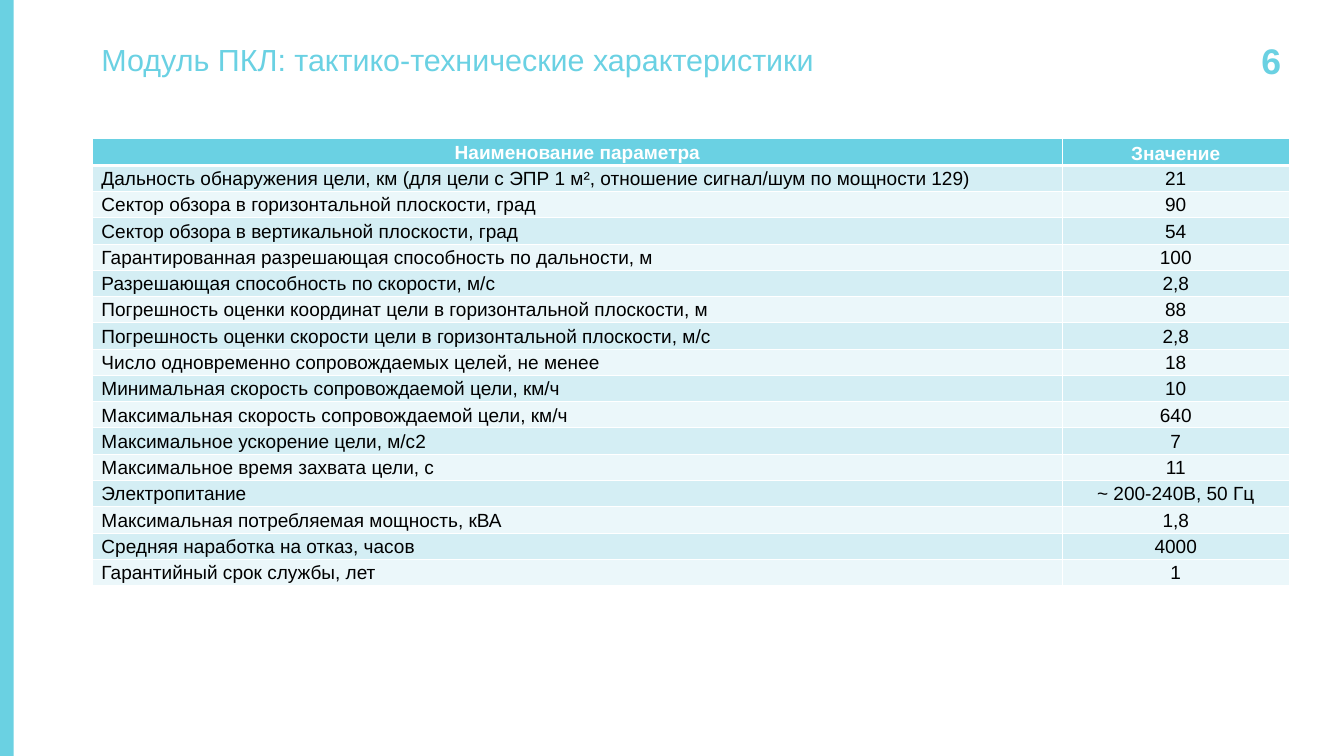
from lxml import etree
from pptx import Presentation
from pptx.dml.color import RGBColor
from pptx.enum.shapes import MSO_SHAPE as SHAPE
from pptx.enum.text import MSO_ANCHOR as ANCHOR, PP_ALIGN as ALIGN
from pptx.oxml.ns import qn
from pptx.util import Inches, Pt

CYAN = RGBColor(0x6A, 0xD1, 0xE2)
HEAD = RGBColor(0x6A, 0xD1, 0xE3)
DARK = RGBColor(0xD4, 0xEE, 0xF4)
PALE = RGBColor(0xEB, 0xF7, 0xFA)
WHITE = RGBColor(0xFF, 0xFF, 0xFF)
BLACK = RGBColor(0, 0, 0)

ROWS = [
    ("Наименование параметра", "Значение"),
    ("Дальность обнаружения цели, км (для цели с ЭПР 1 м², "
     "отношение сигнал/шум по мощности 129)", "21"),
    ("Сектор обзора в горизонтальной плоскости, град", "90"),
    ("Сектор обзора в вертикальной плоскости, град", "54"),
    ("Гарантированная разрешающая способность по дальности, м", "100"),
    ("Разрешающая способность по скорости, м/с", "2,8"),
    ("Погрешность оценки координат цели в горизонтальной плоскости, м", "88"),
    ("Погрешность оценки скорости цели в горизонтальной плоскости, м/с", "2,8"),
    ("Число одновременно сопровождаемых целей, не менее", "18"),
    ("Минимальная скорость сопровождаемой цели, км/ч", "10"),
    ("Максимальная скорость сопровождаемой цели, км/ч", "640"),
    ("Максимальное ускорение цели, м/с2", "7"),
    ("Максимальное время захвата цели, с", "11"),
    ("Электропитание", "~ 200-240В, 50 Гц"),
    ("Максимальная потребляемая мощность, кВА", "1,8"),
    ("Средняя наработка на отказ, часов", "4000"),
    ("Гарантийный срок службы, лет", "1"),
]
COLS = (10.61, 2.48)
TALL = 4.89


def write(frame, text, size, color, bold=False, align=ALIGN.LEFT, space=1.0):
    par = frame.paragraphs[0]
    par.alignment = align
    par.line_spacing = space
    run = par.add_run()
    run.text = text
    font = run.font
    font.name = "Arial"
    font.size = Pt(size)
    font.bold = bold
    font.color.rgb = color


def edge(cell, side, width):
    props = cell._tc.get_or_add_tcPr()
    line = etree.SubElement(props, qn("a:ln" + side), w=str(Pt(width)))
    fill = etree.SubElement(line, qn("a:solidFill"))
    etree.SubElement(fill, qn("a:srgbClr"), val=str(WHITE))


def add_bar(slide, height):
    bar = slide.shapes.add_shape(SHAPE.RECTANGLE, 0, 0, Inches(0.15), height)
    bar.shadow.inherit = False
    bar.fill.solid()
    bar.fill.fore_color.rgb = CYAN
    bar.line.fill.background()


def add_title(slide, text):
    title = slide.shapes.title
    title.left, title.top = Inches(1.01), Inches(0.44)
    title.width, title.height = Inches(12.2), Inches(0.9)
    title.text_frame.vertical_anchor = ANCHOR.TOP
    write(title.text_frame, text, 24, HEAD, space=0.9)


def add_number(slide, text):
    box = slide.shapes.add_textbox(Inches(13.24), Inches(0.44),
                                   Inches(0.87), Inches(0.44))
    frame = box.text_frame
    frame.word_wrap = True
    frame.vertical_anchor = ANCHOR.MIDDLE
    write(frame, text, 28, CYAN, bold=True, align=ALIGN.RIGHT)


def fill_cell(cell, text, row, col):
    head = row == 0
    cell.margin_top = cell.margin_bottom = 0
    cell.margin_left = cell.margin_right = Inches(0.1)
    if head and col:
        cell.vertical_anchor = ANCHOR.MIDDLE
    for side in "LRTB":
        thick = (side == "B" and head) or (side == "T" and row == 1)
        edge(cell, side, 3 if thick else 1)
    cell.fill.solid()
    cell.fill.fore_color.rgb = HEAD if head else DARK if row % 2 else PALE
    write(cell.text_frame, text, 15, WHITE if head else BLACK, bold=head,
          align=ALIGN.CENTER if head or col else ALIGN.LEFT, space=1.15)


def add_grid(slide):
    table = slide.shapes.add_table(len(ROWS), len(COLS), Inches(1.01),
                                   Inches(1.52), Inches(sum(COLS)),
                                   Inches(TALL)).table
    for col, width in enumerate(COLS):
        table.columns[col].width = Inches(width)
    for row, texts in enumerate(ROWS):
        for col, text in enumerate(texts):
            fill_cell(table.cell(row, col), text, row, col)


def main():
    deck = Presentation()
    deck.slide_width, deck.slide_height = Inches(14.7), Inches(8.27)
    slide = deck.slides.add_slide(deck.slide_layouts[5])
    # Side bar and heading
    add_bar(slide, deck.slide_height)
    add_title(slide, "Модуль ПКЛ: тактико-технические характеристики")
    # Table of parameters
    add_grid(slide)
    # Page number
    add_number(slide, "6")
    deck.save("out.pptx")


if __name__ == "__main__":
    main()
